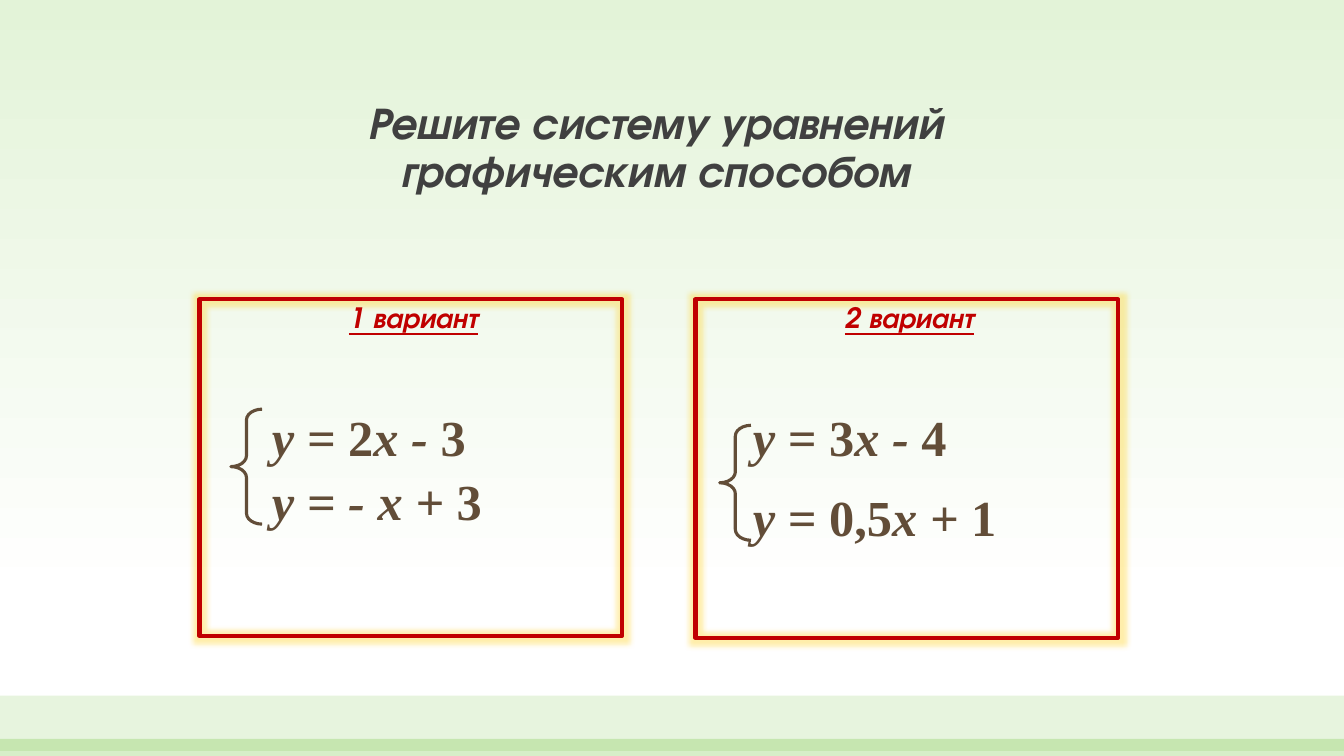
from dataclasses import dataclass

from lxml import etree
from pptx import Presentation
from pptx import util as u
from pptx.dml.color import RGBColor
from pptx.enum import shapes, text
from pptx.oxml import ns


@dataclass(frozen=True)
class Theme:
    heading_font: str = "TeX Gyre Adventor"
    math_font: str = "Times New Roman"
    title: str = "404040"
    frame: str = "C00000"
    math: str = "624D38"
    glow: str = "FFD52F"
    band: str = "72C23C"
    sky: str = "E3F3D8"
    ground: str = "FFFFFF"
    title_size: float = 32
    label_size: float = 20
    math_size: float = 36


@dataclass(frozen=True)
class Box:
    left: float
    top: float
    width: float
    height: float

    def lengths(self) -> tuple:
        return tuple(u.Pt(v) for v in (self.left, self.top, self.width, self.height))


@dataclass(frozen=True)
class Equation:
    top: float
    runs: tuple


@dataclass(frozen=True)
class Variant:
    label: str
    frame: Box
    brace: Box
    math_left: float
    equations: tuple


@dataclass(frozen=True)
class Band:
    box: Box
    opacity: int


THEME = Theme()
BANDS = (Band(Box(0, 496.8, 960, 39.6), 17), Band(Box(0, 527.76, 960, 12.24), 28))
VARIANTS = (
    Variant("1 вариант", Box(142.56, 213.84, 301.68, 240.48),
            Box(164.88, 292.32, 22.32, 82.08), 187.2,
            (Equation(286.56, (("у = ", True), ("2", False), ("х - ", True), ("3", False))),
             Equation(331.92, (("у = - х + ", True), ("3", False))))),
    Variant("2 вариант", Box(496.8, 213.84, 301.68, 241.92),
            Box(514.08, 303.84, 22.32, 82.08), 530.64,
            (Equation(286.56, (("у = ", True), ("3", False), ("х - ", True), ("4", False))),
             Equation(343.44, (("у = ", True), ("0,5", False), ("х + ", True), ("1", False))))),
)


def rgb(value: str) -> RGBColor:
    return RGBColor.from_string(value)


def child(parent, tag: str, **attributes: str):
    return etree.SubElement(parent, ns.qn(tag), attributes)


def place(sp, box: Box) -> None:
    sp.left, sp.top, sp.width, sp.height = box.lengths()


def add_run(p, words: str, font: str, size: float, color: str, italic: bool = True):
    r = p.add_run()
    r.text = words
    r.font.name = font
    r.font.size = u.Pt(size)
    r.font.color.rgb = rgb(color)
    r.font.bold = True
    r.font.italic = italic
    return r


def paint_background(s) -> None:
    fill = s.background.fill
    fill.gradient()
    fill.gradient_angle = 270
    stops = ((0, THEME.sky), (0.79, THEME.ground))
    for stop, (position, color) in zip(fill.gradient_stops, stops):
        stop.position = position
        stop.color.rgb = rgb(color)


def draw_band(s, band: Band) -> None:
    sp = s.shapes.add_shape(shapes.MSO_SHAPE.RECTANGLE, *band.box.lengths())
    sp.shadow.inherit = False
    sp.fill.solid()
    sp.fill.fore_color.rgb = rgb(THEME.band)
    sp.line.fill.background()
    color = sp.fill._xPr.find(ns.qn("a:solidFill"))[0]
    child(color, "a:alpha", val=str(band.opacity * 1000))


def fill_title(sp) -> None:
    place(sp, Box(148.32, 27.36, 639.36, 158.4))
    tf = sp.text_frame
    tf.auto_size = text.MSO_AUTO_SIZE.NONE
    tf.vertical_anchor = text.MSO_ANCHOR.MIDDLE
    p = tf.paragraphs[0]
    p.alignment = text.PP_ALIGN.CENTER
    p.line_spacing = 0.9
    style = (THEME.heading_font, THEME.title_size, THEME.title)
    add_run(p, "Решите систему уравнений", *style)
    p.add_line_break()
    add_run(p, "графическим способом", *style)


def fill_frame(sp, variant: Variant) -> None:
    place(sp, variant.frame)
    sp.line.color.rgb = rgb(THEME.frame)
    sp.line.width = u.Pt(3)
    effects = child(sp._element.spPr, "a:effectLst")
    glow = child(effects, "a:glow", rad=str(u.Pt(8)))
    color = child(glow, "a:srgbClr", val=THEME.glow)
    child(color, "a:alpha", val="40000")
    tf = sp.text_frame
    tf.auto_size = text.MSO_AUTO_SIZE.NONE
    p = tf.paragraphs[0]
    p.alignment = text.PP_ALIGN.CENTER
    p.line_spacing = 0.9
    p.space_before = u.Pt(18)
    pPr = p._p.get_or_add_pPr()
    pPr.set("marL", str(u.Pt(21.6)))
    pPr.set("indent", str(u.Pt(-18)))
    child(pPr, "a:buNone")
    r = add_run(p, variant.label, THEME.heading_font, THEME.label_size, THEME.frame)
    r.font.underline = True


def draw_system(s, variant: Variant) -> None:
    for equation in variant.equations:
        box = Box(variant.math_left, equation.top, 225.36, 51.12)
        tf = s.shapes.add_textbox(*box.lengths()).text_frame
        tf.word_wrap = True
        tf.auto_size = text.MSO_AUTO_SIZE.SHAPE_TO_FIT_TEXT
        for words, italic in equation.runs:
            add_run(tf.paragraphs[0], words, THEME.math_font, THEME.math_size,
                    THEME.math, italic)
    sp = s.shapes.add_shape(shapes.MSO_SHAPE.LEFT_BRACE, *variant.brace.lengths())
    sp.shadow.inherit = False
    sp.fill.background()
    sp.line.color.rgb = rgb(THEME.math)
    sp.line.width = u.Pt(2.25)
    sp.adjustments[0] = 0.348


def main() -> None:
    prs = Presentation()
    prs.slide_width, prs.slide_height = u.Pt(960), u.Pt(540)
    s = prs.slides.add_slide(prs.slide_layouts[3])
    paint_background(s)
    for band in BANDS:
        draw_band(s, band)
    fill_title(s.shapes.title)
    for index, variant in enumerate(VARIANTS, start=1):
        fill_frame(s.placeholders[index], variant)
        draw_system(s, variant)
    prs.save("out.pptx")


if __name__ == "__main__":
    main()
